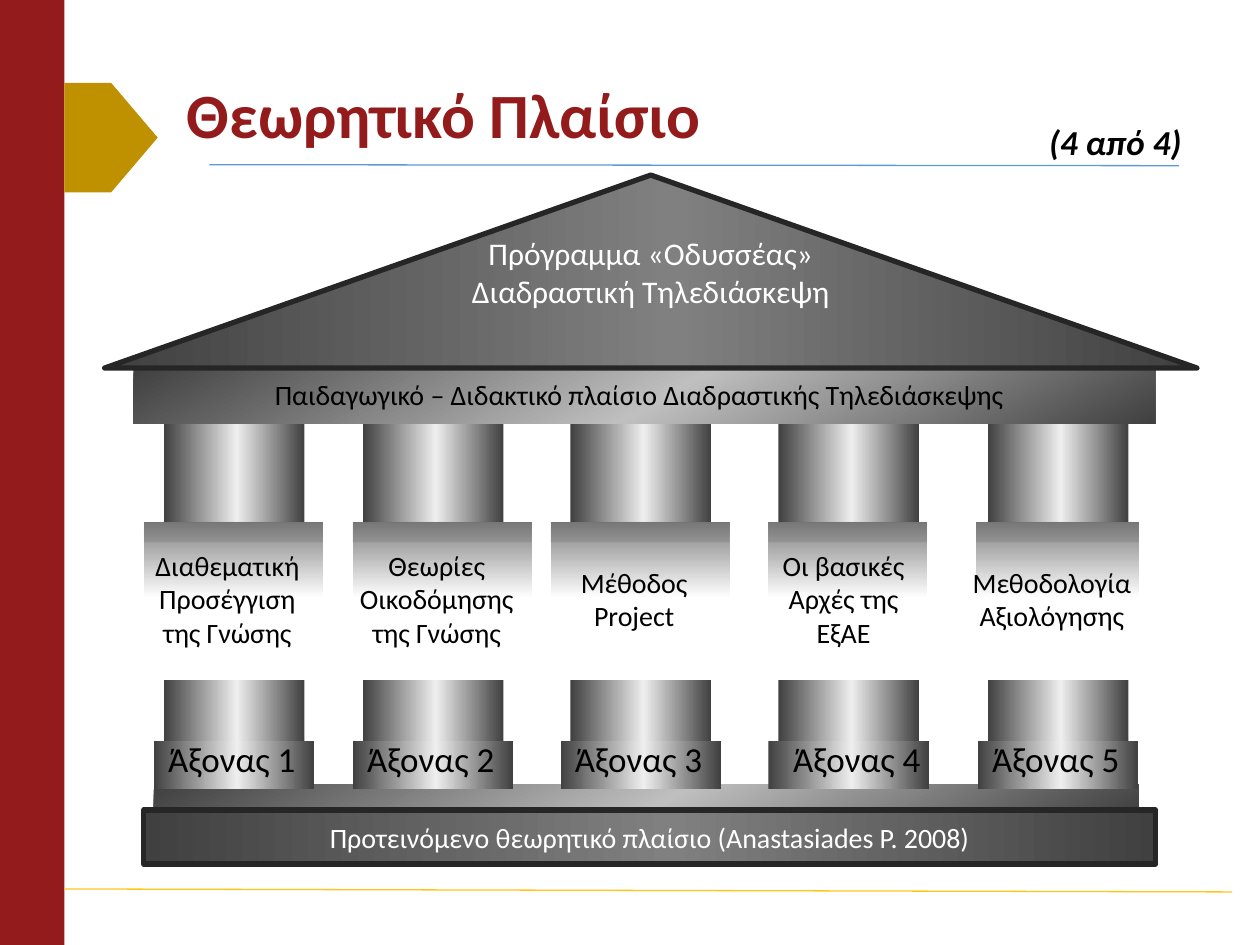
from copy import deepcopy

from lxml import etree
from pptx import Presentation
from pptx import util as u
from pptx.dml.color import RGBColor
from pptx.enum import shapes, text
from pptx.oxml.ns import qn

FONT = "Calibri"
RED, GOLD, BLUE, YELLOW = "931B1B", "BF9000", "5B9BD5", "FFC61A"
BLACK, WHITE, OUTLINE, DARK = "000000", "FFFFFF", "262626", "404040"
COLUMN_STONE = (DARK, "EEEEEE", DARK)
SLAB_STONE = (DARK, "BFBFBF", DARK)
FRAME_STONE = (DARK, "808080", DARK)
PANEL_FADE = (WHITE, WHITE, "808080")

# plinth left, axis label left, panel left, panel width,
# caption left, caption width, caption paragraphs, caption height
PILLARS = [
    (3.10, 3.10, 2.90, 3.61, 2.49, 4.19, ["Διαθεματική Προσέγγιση", "της Γνώσης"], 2.31),
    (7.11, 7.11, 7.11, 3.61, 6.71, 4.19, ["Θεωρίες Οικοδόμησης της Γνώσης"], 2.31),
    (11.30, 11.30, 11.10, 3.61, 10.69, 4.19, ["Μέθοδος Project"], 1.63),
    (15.49, 15.70, 15.49, 3.20, 14.91, 4.19, ["Οι βασικές Αρχές της", "ΕξΑΕ"], 2.31),
    (19.71, 19.71, 19.68, 3.28, 19.30, 3.81, ["Μεθοδολογία Αξιολόγησης"], 1.63),
]
CAPTION_MIDDLE = 12.07


def rgb(color):
    return RGBColor.from_string(color)


def box(left, top, width, height):
    return u.Cm(left), u.Cm(top), u.Cm(width), u.Cm(height)


def fill_gradient(shape, colors, angle=0):
    """Three-stop linear gradient; the angle runs counter-clockwise."""
    shape.fill.gradient()
    shape.fill.gradient_angle = angle
    stop_list = shape._element.spPr.find(qn("a:gradFill")).find(qn("a:gsLst"))
    stop_list.insert(1, deepcopy(stop_list[0]))
    for stop, color, position in zip(shape.fill.gradient_stops, colors, (0, 0.52, 1)):
        stop.color.rgb = rgb(color)
        stop.position = position


def style_outline(shape, framed):
    shape.shadow.inherit = False
    if framed:
        shape.line.color.rgb = rgb(OUTLINE)
        shape.line.width = u.Pt(3)
    else:
        shape.line.fill.background()


def add_block(slide, bounds, fill, kind=shapes.MSO_SHAPE.RECTANGLE,
              angle=0, alpha=None, framed=False):
    """Preset shape; fill is one colour or three gradient colours."""
    shape = slide.shapes.add_shape(kind, *box(*bounds))
    if isinstance(fill, tuple):
        fill_gradient(shape, fill, angle)
    else:
        shape.fill.solid()
        shape.fill.fore_color.rgb = rgb(fill)
    if alpha:
        color = shape._element.spPr.find(qn("a:solidFill"))[0]
        etree.SubElement(color, qn("a:alpha"), val=str(alpha * 1000))
    style_outline(shape, framed)
    return shape


def write(shape, lines, size, color=BLACK, align=text.PP_ALIGN.CENTER,
          bold=False, italic=False, spacing=None):
    frame = shape.text_frame
    frame.word_wrap = True
    frame.vertical_anchor = text.MSO_ANCHOR.MIDDLE
    frame.text = "\n".join(lines)
    for paragraph in frame.paragraphs:
        paragraph.alignment = align
        paragraph.line_spacing = spacing
        font = paragraph.font
        font.name, font.size = FONT, u.Pt(size)
        font.bold, font.italic = bold, italic
        font.color.rgb = rgb(color)


def add_label(slide, bounds, lines, size, **style):
    write(slide.shapes.add_textbox(*box(*bounds)), lines, size, **style)


def add_rule(slide, start, end, color):
    ends = [u.Cm(value) for value in (*start, *end)]
    line = slide.shapes.add_connector(shapes.MSO_CONNECTOR.STRAIGHT, *ends)
    line.line.color.rgb = rgb(color)
    line.line.width = u.Pt(0.75)
    etree.SubElement(line._element.spPr, qn("a:effectLst"))


def add_frame(slide):
    add_block(slide, (0, 0, 1.3, 19.05), RED)
    add_rule(slide, (4.22, 3.32), (23.77, 3.34), BLUE)
    add_rule(slide, (1.3, 17.92), (24.84, 17.98), YELLOW)
    add_block(slide, (1.3, 1.67, 1.88, 2.21), GOLD, shapes.MSO_SHAPE.PENTAGON)


def add_title(slide):
    title = slide.shapes.title
    title.left, title.top, title.width, title.height = box(3.51, 1.32, 21, 2.13)
    write(title, ["Θεωρητικό Πλαίσιο"], 36, color=RED,
          align=text.PP_ALIGN.LEFT, bold=True, spacing=0.9)
    title.text_frame.auto_size = text.MSO_AUTO_SIZE.NONE
    add_label(slide, (20.9, 2.51, 3.4, 0.79), ["(4 από 4)"], 20,
              align=text.PP_ALIGN.LEFT, bold=True, italic=True, spacing=0.9)


def add_pediment(slide):
    builder = slide.shapes.build_freeform(u.Cm(13.12), u.Cm(3.53))
    builder.add_line_segments([(u.Cm(24.13), u.Cm(7.42)), (u.Cm(2.11), u.Cm(7.42))])
    pediment = builder.convert_to_shape()
    fill_gradient(pediment, FRAME_STONE)
    style_outline(pediment, framed=True)
    write(pediment, ["Πρόγραμμα «Οδυσσέας»", "Διαδραστική Τηλεδιάσκεψη"], 18, color=WHITE)


def add_slabs(slide):
    add_block(slide, (2.69, 7.42, 20.6, 1.12), SLAB_STONE, angle=300)
    add_block(slide, (3.1, 15.82, 19.86, 0.61), SLAB_STONE, angle=300)
    add_block(slide, (2.9, 16.33, 20.4, 1.09), FRAME_STONE, framed=True)
    add_pediment(slide)
    add_label(slide, (2.69, 7.47, 20.4, 0.94),
              ["Παιδαγωγικό – Διδακτικό πλαίσιο Διαδραστικής Τηλεδιάσκεψης"], 16)
    add_label(slide, (2.9, 16.41, 20.4, 0.94),
              ["Προτεινόμενο θεωρητικό πλαίσιο (Anastasiades P. 2008)"], 16, color=WHITE)


def add_pillar_front(slide, number, pillar):
    """Panel with caption, and plinth with axis label."""
    plinth, label, panel, panel_width, caption, caption_width, lines, height = pillar
    add_block(slide, (panel, 10.52, panel_width, 3.2), PANEL_FADE, angle=90)
    add_block(slide, (panel, 10.52, panel_width, 0.41), DARK, alpha=14)
    add_label(slide, (caption, CAPTION_MIDDLE - height / 2, caption_width, height), lines, 16)
    add_block(slide, (plinth, 14.94, 3.23, 0.97), COLUMN_STONE)
    add_label(slide, (label, 14.73, 3.15, 1.12), [f"Άξονας {number}"], 20)


def main():
    presentation = Presentation()
    presentation.slide_width, presentation.slide_height = u.Cm(25.4), u.Cm(19.05)
    slide = presentation.slides.add_slide(presentation.slide_layouts[5])
    add_frame(slide)
    add_title(slide)
    for plinth, *_ in PILLARS:
        add_block(slide, (plinth + 0.2, 8.53, 2.84, 7.57), COLUMN_STONE)
    add_slabs(slide)
    for number, pillar in enumerate(PILLARS, 1):
        add_pillar_front(slide, number, pillar)
    presentation.save("out.pptx")


if __name__ == "__main__":
    main()
